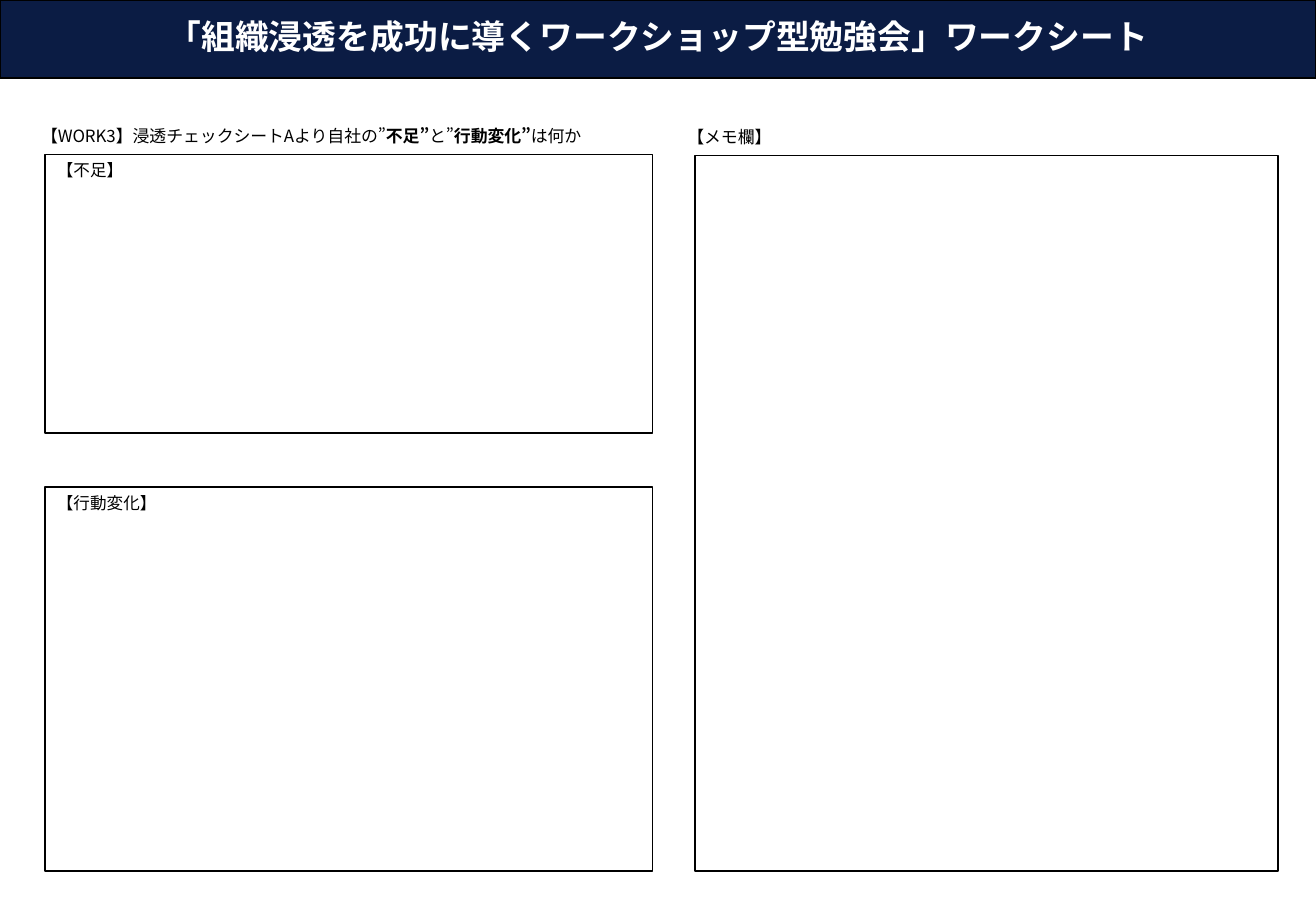
"""Build the workshop worksheet slide."""
from dataclasses import dataclass
from typing import Any, Optional

from lxml.etree import SubElement
from pptx import Presentation
from pptx.dml.color import RGBColor
from pptx.enum.lang import MSO_LANGUAGE_ID as Lang
from pptx.enum.shapes import MSO_SHAPE as Kind
from pptx.enum.text import MSO_ANCHOR as Anchor, PP_ALIGN as Align
from pptx.oxml.ns import qn
from pptx.util import Cm, Pt

NAVY = RGBColor(0x0B, 0x1C, 0x44)
WHITE = RGBColor(0xFF, 0xFF, 0xFF)
BLACK = RGBColor(0, 0, 0)
FACE = "Noto Sans CJK JP"

Runs = tuple[tuple[str, bool], ...]
LEFT = {"alignment": Align.LEFT}
HEAD = {"alignment": Align.CENTER, "line_spacing": 0.9}
LABEL = {"alignment": Align.LEFT, "line_spacing": 0.9, "space_before": Pt(10)}
TIGHT = {"margin_left": Cm(0.2), "margin_right": Cm(0.2),
         "margin_top": Cm(0.1), "margin_bottom": Cm(0.1)}


@dataclass(frozen=True)
class Text:
    runs: Runs
    size: float
    para: dict[str, Any]
    frame: dict[str, Any]
    color: RGBColor = BLACK


@dataclass(frozen=True)
class Item:
    left: float
    top: float
    width: float
    height: float
    text: Optional[Text] = None
    fill: Optional[RGBColor] = None
    box: bool = True


def topic(word: str) -> Text:
    return Text(((word, False),), 9.8, LEFT, {"vertical_anchor": Anchor.TOP})


TITLE = Text((("「組織浸透を成功に導くワークショップ型勉強会」ワークシート", True),),
             20, HEAD, {"vertical_anchor": Anchor.MIDDLE}, WHITE)
TASK = Text((("【WORK3】浸透チェックシートAより自社の”", False), ("不足”", True),
             ("と”", False), ("行動変化”", True), ("は何か", False)),
            10, LABEL, TIGHT)
MEMO = Text((("【メモ欄】", False),), 10, LABEL, {})

ITEMS = (
    Item(0, 0, 27.51, 1.63, TITLE, NAVY),
    Item(0.66, 2.57, 13.46, 0.66, TASK, box=False),
    Item(0.94, 3.23, 12.7, 5.82, topic("【不足】"), WHITE),
    Item(0.94, 10.19, 12.7, 8.03, topic("【行動変化】"), WHITE),
    Item(14.53, 3.25, 12.19, 14.96),
    Item(14.12, 2.57, 4.7, 1.35, MEMO, box=False),
)


def apply(target: Any, style: dict[str, Any]) -> None:
    for name, value in style.items():
        setattr(target, name, value)


def write(frame: Any, text: Text) -> None:
    apply(frame, {"word_wrap": True, **text.frame})
    para = frame.paragraphs[0]
    apply(para, text.para)
    for words, bold in text.runs:
        run = para.add_run()
        run.text = words
        run.font.color.rgb = text.color
        apply(run.font, {"name": FACE, "size": Pt(text.size), "bold": bold,
                         "language_id": Lang.JAPANESE})
        SubElement(run.font._element, qn("a:ea"), typeface=FACE)


def draw(shapes: Any, item: Item) -> None:
    area = [Cm(n) for n in (item.left, item.top, item.width, item.height)]
    if item.box:
        shape = shapes.add_shape(Kind.RECTANGLE, *area)
        shape.shadow.inherit = False
        shape.line.color.rgb = BLACK
        shape.line.width = Pt(1)
        if item.fill is None:
            shape.fill.background()
        else:
            shape.fill.solid()
            shape.fill.fore_color.rgb = item.fill
    else:
        shape = shapes.add_textbox(*area)
    if item.text:
        write(shape.text_frame, item.text)


def main() -> None:
    deck = Presentation()
    apply(deck, {"slide_width": Cm(27.51), "slide_height": Cm(19.05)})
    slide = deck.slides.add_slide(deck.slide_layouts[6])
    for item in ITEMS:
        draw(slide.shapes, item)
    deck.save("out.pptx")


if __name__ == "__main__":
    main()
